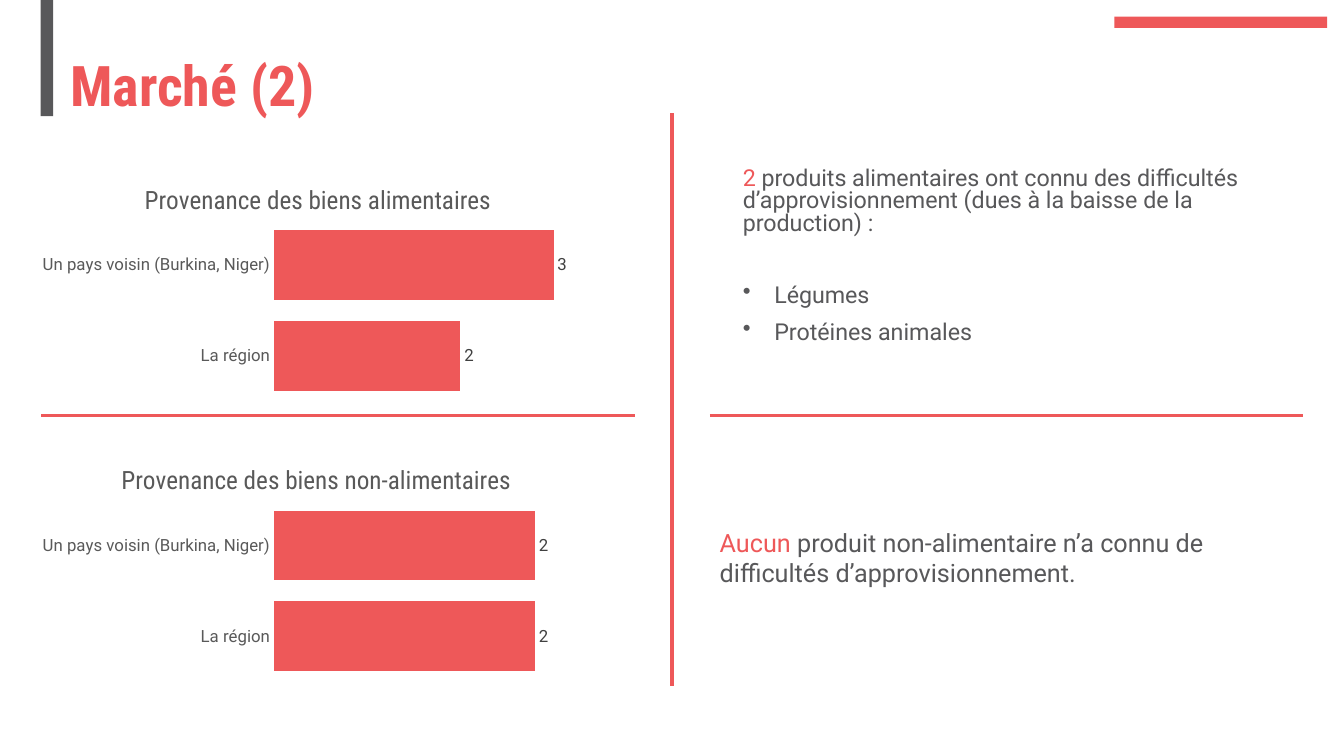
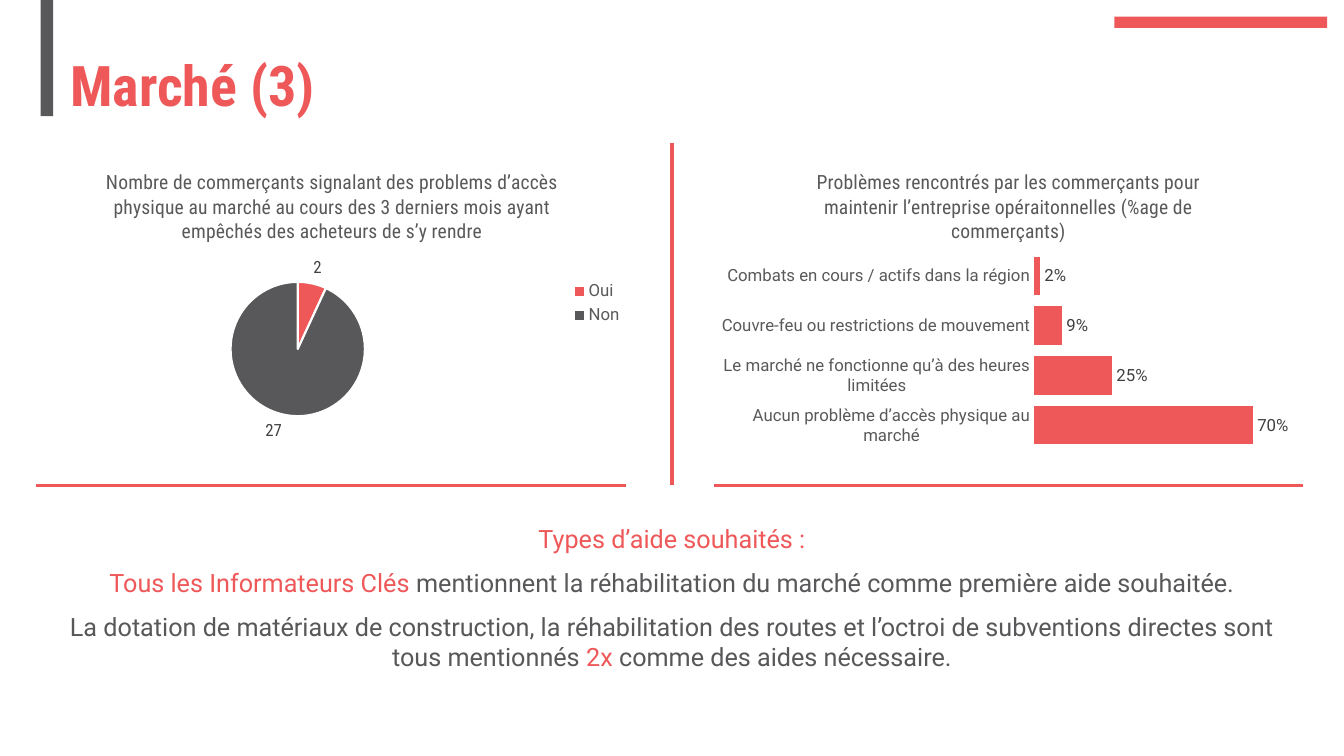
from lxml import etree
from pptx import Presentation
from pptx.chart.data import CategoryChartData
from pptx.dml.color import RGBColor
from pptx.enum.chart import XL_CHART_TYPE, XL_LABEL_POSITION, XL_LEGEND_POSITION, XL_TICK_MARK
from pptx.enum.shapes import MSO_CONNECTOR, MSO_SHAPE
from pptx.enum.text import MSO_ANCHOR, PP_ALIGN
from pptx.oxml.ns import qn
from pptx.util import Pt

RED = RGBColor(0xEE, 0x58, 0x59)
GRAY = RGBColor(0x58, 0x58, 0x5A)
AXIS_GRAY = RGBColor(0x59, 0x59, 0x59)
LABEL_GRAY = RGBColor(0x40, 0x40, 0x40)
WHITE = RGBColor(0xFF, 0xFF, 0xFF)
BODY = "Roboto"
CONDENSED = "Roboto Condensed"

BAR = XL_CHART_TYPE.BAR_CLUSTERED
PIE = XL_CHART_TYPE.PIE
OUTSIDE_END = XL_LABEL_POSITION.OUTSIDE_END
LEGEND_RIGHT = XL_LEGEND_POSITION.RIGHT
NO_TICK = XL_TICK_MARK.NONE
STRAIGHT = MSO_CONNECTOR.STRAIGHT
RECTANGLE = MSO_SHAPE.RECTANGLE
MIDDLE = MSO_ANCHOR.MIDDLE
LEFT = PP_ALIGN.LEFT
CENTER = PP_ALIGN.CENTER


def points(*lengths):
    return [Pt(length) for length in lengths]


def style_font(font, name, size, color=None, bold=False):
    font.name = name
    font.size = Pt(size)
    font.bold = bold
    if color is not None:
        font.color.rgb = color


def add_bands(s, layout):
    for box, color in (((796, 12, 152, 8), RED), ((29, 0, 9, 83), GRAY)):
        band = s.shapes.add_shape(RECTANGLE, *points(*box))
        band.shadow.inherit = False
        band.fill.solid()
        band.fill.fore_color.rgb = color
        band.line.fill.background()
        layout.shapes._spTree.append(band._element)


def set_title(s, text):
    title = s.shapes.title
    title.left, title.top, title.width, title.height = points(43, 39, 657, 48)
    tf = title.text_frame
    tf.text = text
    tf.vertical_anchor = MIDDLE
    p = tf.paragraphs[0]
    p.alignment = LEFT
    p.line_spacing = 0.9
    style_font(p.font, CONDENSED, 40, RED, True)


def add_rule(s, x1, y1, x2, y2):
    rule = s.shapes.add_connector(STRAIGHT, *points(x1, y1, x2, y2))
    rule.line.color.rgb = RED
    rule.line.width = Pt(2.25)
    etree.SubElement(rule._element.spPr, qn("a:effectLst"))


def add_text(s, box, paragraphs, size, align=LEFT, spacing=None):
    tf = s.shapes.add_textbox(*points(*box)).text_frame
    tf.word_wrap = True
    for i, runs in enumerate(paragraphs):
        p = tf.paragraphs[0] if i == 0 else tf.add_paragraph()
        p.alignment = align
        p.line_spacing = spacing
        p.space_before = Pt(10)
        style_font(p.font, BODY, size)
        for text, color in runs:
            r = p.add_run()
            r.text = text
            r.font.color.rgb = color
    return tf


def add_bullet(p):
    pPr = p._p.get_or_add_pPr()
    indent = Pt(22.5)
    pPr.set("marL", str(indent))
    pPr.set("indent", str(-indent))
    bullet = etree.Element(qn("a:buChar"), char="•")
    pPr.insert_element_before(bullet, "a:tabLst", "a:defRPr", "a:extLst")


def set_layout(parent, index, x, y, w=None, h=None):
    for old in parent.findall(qn("c:layout")):
        parent.remove(old)
    layout = etree.Element(qn("c:layout"))
    manual = etree.SubElement(layout, qn("c:manualLayout"))
    values = [("xMode", "edge"), ("yMode", "edge"), ("x", x), ("y", y)]
    if w is not None:
        values = [("layoutTarget", "inner"), *values, ("w", w), ("h", h)]
    for tag, value in values:
        etree.SubElement(manual, qn("c:" + tag), val=str(value))
    parent.insert(index, layout)


def add_chart(s, kind, box, title, title_size, title_at, plot_box, data, number_format="0", font=BODY):
    chart_data = CategoryChartData(number_format=number_format)
    chart_data.categories = list(data)
    chart_data.add_series("Series 1", list(data.values()))
    chart = s.shapes.add_chart(kind, *points(*box), chart_data).chart
    style_font(chart.font, font, 10)
    chart.has_legend = False
    chart.has_title = True
    tf = chart.chart_title.text_frame
    tf.text = title
    style_font(tf.paragraphs[0].font, CONDENSED, title_size, AXIS_GRAY)
    set_layout(chart.chart_title._element, 1, *title_at)
    set_layout(chart._chartSpace.chart.plotArea, 0, *plot_box)

    plot = chart.plots[0]
    plot.has_data_labels = True
    labels = plot.data_labels
    labels.show_value = True
    labels.show_percentage = False
    labels.position = OUTSIDE_END
    labels.number_format = number_format
    labels.number_format_is_linked = False
    style_font(labels.font, font, 12, LABEL_GRAY)
    return chart


def add_bar_chart(s, *args, maximum, **kwargs):
    chart = add_chart(s, BAR, *args, **kwargs)
    plot = chart.plots[0]
    plot.gap_width = 30
    plot.vary_by_categories = False
    fill = plot.series[0].format.fill
    fill.solid()
    fill.fore_color.rgb = RED

    axis = chart.category_axis
    axis.major_tick_mark = NO_TICK
    axis.minor_tick_mark = NO_TICK
    axis.format.line.fill.background()
    style_font(axis.tick_labels.font, BODY, 12, AXIS_GRAY)
    values = chart.value_axis
    values.minimum_scale = 0
    values.maximum_scale = maximum
    values.has_major_gridlines = False
    values.visible = False


def add_pie_chart(s, *args):
    chart = add_chart(s, PIE, *args, font=CONDENSED)
    chart.plots[0].vary_by_categories = True
    for i, color in enumerate((RED, GRAY)):
        slice_format = chart.plots[0].series[0].points[i].format
        slice_format.fill.solid()
        slice_format.fill.fore_color.rgb = color
        slice_format.line.color.rgb = WHITE
        slice_format.line.width = Pt(1.5)
    chart.has_legend = True
    chart.legend.position = LEGEND_RIGHT
    chart.legend.include_in_layout = False
    style_font(chart.legend.font, BODY, 12, AXIS_GRAY)


def build_supply_slide(s):
    set_title(s, "Marché (2)")
    add_rule(s, 480, 490, 480, 81)
    for x in (29.5, 507):
        add_rule(s, x, 297, x + 424, 297)

    for top, goods, title_x, neighbour, maximum in (
        (117, "alimentaires", 0.19, 3, 3.5),
        (317.5, "non-alimentaires", 0.15, 2, 2.5),
    ):
        add_bar_chart(
            s, (21, top, 416, 173), "Provenance des biens " + goods, 18,
            (title_x, 0.06), (0.42, 0.23, 0.56, 0.75),
            {"La région": 2, "Un pays voisin (Burkina, Niger)": neighbour},
            maximum=maximum,
        )

    tf = add_text(s, (523.5, 117, 393, 147), [
        [("2 ", RED),
         ("produits alimentaires ont connu des difficultés d’approvisionnement "
          "(dues à la baisse de la production) :", GRAY)],
        [("Légumes", GRAY)],
        [("Protéines animales", GRAY)],
    ], 16.6, spacing=0.8)
    for p in tf.paragraphs[1:]:
        add_bullet(p)
    tf.paragraphs[1].space_before = Pt(36)

    add_text(s, (507, 373, 436, 103), [
        [("Aucun ", RED),
         ("produit non-alimentaire n’a connu de difficultés d’approvisionnement.", GRAY)],
    ], 18)


def build_access_slide(s):
    set_title(s, "Marché (3)")
    add_rule(s, 480, 102, 480, 346.5)
    for x in (26, 510):
        add_rule(s, x, 346.5, x + 421, 346.5)

    add_pie_chart(
        s, (16.5, 107, 436, 219),
        "Nombre de commerçants signalant des problems d’accès physique au marché "
        "au cours des 3 derniers mois ayant empêchés des acheteurs de s’y rendre",
        14, (0.13, 0.05), (0.34, 0.43, 0.22, 0.44), {"Oui": 2, "Non": 27},
    )
    add_bar_chart(
        s, (510, 107, 416, 219),
        "Problèmes rencontrés par les commerçants pour maintenir l’entreprise "
        "opéraitonnelles (%age de commerçants)",
        14, (0.17, 0.05), (0.55, 0.33, 0.43, 0.65),
        {
            "Aucun problème d’accès physique au marché": 0.7,
            "Le marché ne fonctionne qu’à des heures limitées": 0.25,
            "Couvre-feu ou restrictions de mouvement": 0.09,
            "Combats en cours / actifs dans la région": 0.02,
        },
        number_format="0%", maximum=0.8,
    )

    add_text(s, (34.5, 370, 891, 116), [
        [("Types d’aide souhaités :", RED)],
        [("Tous les Informateurs Clés ", RED),
         ("mentionnent la réhabilitation du marché comme première aide souhaitée.", GRAY)],
        [("La dotation de matériaux de construction, la réhabilitation des routes et l’octroi "
          "de subventions directes sont tous mentionnés ", GRAY),
         ("2x ", RED),
         ("comme des aides nécessaire.", GRAY)],
    ], 18, CENTER)


def main():
    prs = Presentation()
    prs.slide_width, prs.slide_height = points(960, 540)
    layout = prs.slide_layouts[5]
    supply, access = [prs.slides.add_slide(layout) for _ in range(2)]
    add_bands(supply, layout)
    build_supply_slide(supply)
    build_access_slide(access)
    prs.save("out.pptx")


if __name__ == "__main__":
    main()
